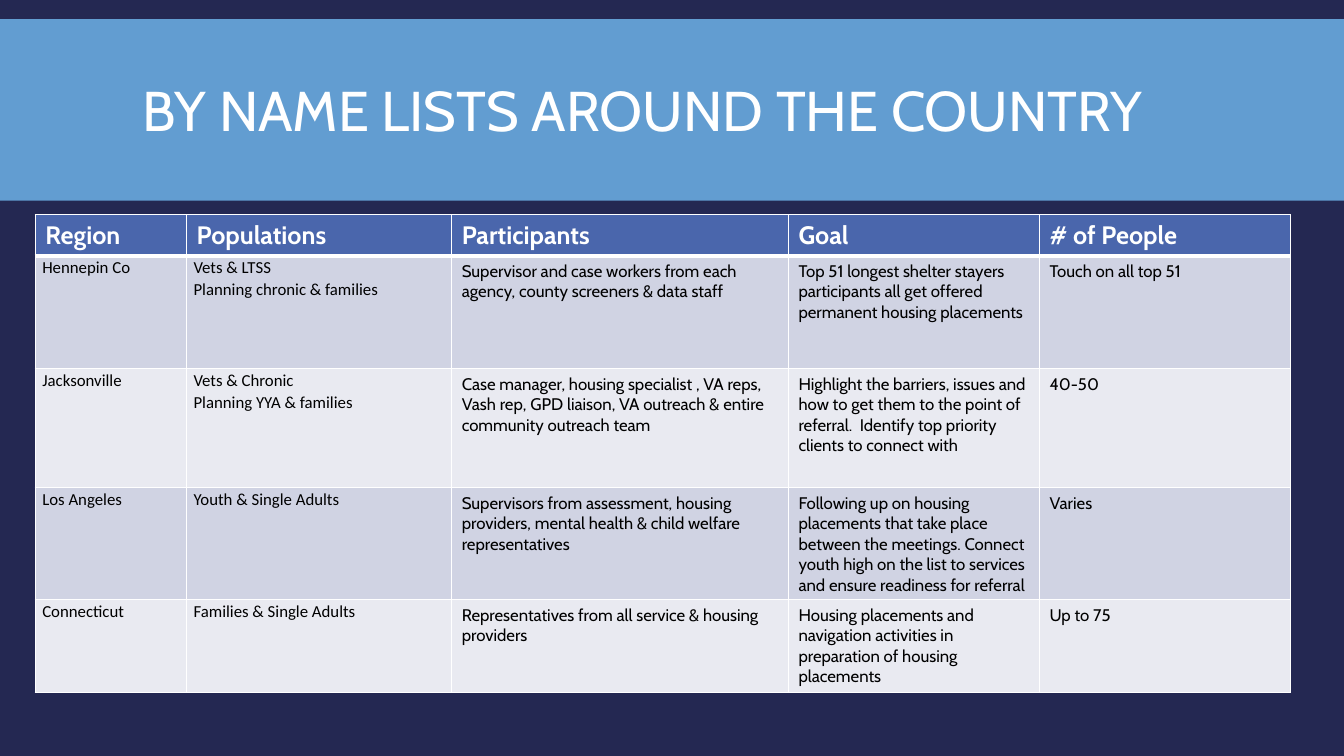
from dataclasses import dataclass

from lxml.etree import SubElement
from pptx import Presentation
from pptx.dml.color import RGBColor as Color
from pptx.enum.shapes import MSO_SHAPE as Preset
from pptx.enum.text import MSO_ANCHOR as Anchor
from pptx.oxml.ns import qn
from pptx.util import Inches, Pt


@dataclass(frozen=True)
class Theme:
    background: str = "242852"
    banner: str = "629DD1"
    header: str = "4A66AC"
    bands: tuple = ("D0D3E3", "E9EAF1")
    light: str = "FFFFFF"
    dark: str = "000000"
    main_font: str = "Cabin"
    label_font: str = "Calibri"
    title_size: int = 40
    header_size: int = 18
    body_size: int = 12
    thin: int = 1
    thick: int = 3


COLUMN_WIDTHS = (1.5, 2.63, 3.34, 2.49, 2.49)
ROW_HEIGHTS = (0.41, 1.12, 1.18, 1.11, 0.92)
LABEL_COLUMNS = 2
HEADINGS = ("Region", "Populations", "Participants", "Goal", "# of People")
REGIONS = (
    (
        "Hennepin Co",
        "Vets & LTSS\nPlanning chronic & families",
        "Supervisor and case workers from each agency, county screeners & data staff",
        "Top 51 longest shelter stayers participants all get offered permanent housing placements",
        "Touch on all top 51",
    ),
    (
        "Jacksonville",
        "Vets & Chronic\nPlanning YYA & families",
        "Case manager, housing specialist , VA reps,  Vash rep, GPD liaison, "
        "VA outreach & entire community outreach team",
        "Highlight the barriers, issues and how to get them to the point of referral.  "
        "Identify top priority clients to connect with",
        "40-50",
    ),
    (
        "Los Angeles",
        "Youth & Single Adults",
        "Supervisors from assessment, housing providers, mental health & child welfare representatives",
        "Following up on housing placements that take place between the meetings. "
        "Connect youth high on the list to services and ensure readiness for referral",
        "Varies",
    ),
    (
        "Connecticut",
        "Families & Single Adults",
        "Representatives from all service & housing providers",
        "Housing placements and navigation activities in preparation of housing placements",
        "Up to 75",
    ),
)


def write_text(frame, text, *, font, size, color, bold=False, spacing=None):
    for index, line in enumerate(text.split("\n")):
        para = frame.add_paragraph() if index else frame.paragraphs[0]
        if spacing:
            para.line_spacing = spacing
        span = para.add_run()
        span.text = line
        span.font.name = font
        span.font.size = Pt(size)
        span.font.bold = bold
        span.font.color.rgb = Color.from_string(color)


class PageBuilder:
    def __init__(self, page, theme):
        self.page = page
        self.theme = theme

    def background(self):
        fill = self.page.background.fill
        fill.solid()
        fill.fore_color.rgb = Color.from_string(self.theme.background)

    def banner(self, *place):
        box = self.page.shapes.add_shape(Preset.RECTANGLE, *map(Inches, place))
        box.shadow.inherit = False
        box.fill.solid()
        box.fill.fore_color.rgb = Color.from_string(self.theme.banner)
        box.line.fill.background()

    def title(self, text, *place):
        frame = self.page.shapes.add_textbox(*map(Inches, place)).text_frame
        frame.word_wrap = True
        frame.vertical_anchor = Anchor.MIDDLE
        write_text(frame, text, font=self.theme.main_font, size=self.theme.title_size,
                   color=self.theme.light, spacing=0.85)

    def borders(self, cell, top, bottom):
        properties = cell._tc.get_or_add_tcPr()
        widths = {"lnL": self.theme.thin, "lnR": self.theme.thin, "lnT": top, "lnB": bottom}
        for side, width in widths.items():
            line = SubElement(properties, qn(f"a:{side}"), w=str(Pt(width)))
            fill = SubElement(line, qn("a:solidFill"))
            SubElement(fill, qn("a:srgbClr"), val=self.theme.light)

    def cell(self, cell, text, row, column):
        theme = self.theme
        is_header = row == 0
        is_label = not is_header and column < LABEL_COLUMNS
        self.borders(cell, theme.thick if row == 1 else theme.thin,
                     theme.thick if is_header else theme.thin)
        cell.fill.solid()
        shade = theme.header if is_header else theme.bands[(row - 1) % 2]
        cell.fill.fore_color.rgb = Color.from_string(shade)
        if is_label:
            cell.margin_left = cell.margin_right = Inches(0.07)
            cell.margin_top = cell.margin_bottom = 0
        write_text(
            cell.text_frame, text,
            font=theme.label_font if is_label else theme.main_font,
            size=theme.header_size if is_header else theme.body_size,
            color=theme.light if is_header else theme.dark,
            bold=is_header,
            spacing=1.07 if is_label else None,
        )

    def table(self, rows, left, top):
        place = map(Inches, (left, top, sum(COLUMN_WIDTHS), sum(ROW_HEIGHTS)))
        table = self.page.shapes.add_table(len(rows), len(COLUMN_WIDTHS), *place).table
        for column, width in zip(table.columns, COLUMN_WIDTHS):
            column.width = Inches(width)
        for row, height in zip(table.rows, ROW_HEIGHTS):
            row.height = Inches(height)
        for row, texts in enumerate(rows):
            for column, text in enumerate(texts):
                self.cell(table.cell(row, column), text, row, column)


def main():
    deck = Presentation()
    deck.slide_width, deck.slide_height = Inches(13.33), Inches(7.5)
    builder = PageBuilder(deck.slides.add_slide(deck.slide_layouts[6]), Theme())
    builder.background()
    builder.banner(0, 0.19, 13.33, 1.8)
    builder.title("BY NAME LISTS AROUND THE COUNTRY", 1.32, 0.31, 10.7, 1.65)
    builder.table((HEADINGS, *REGIONS), 0.35, 2.13)
    deck.save("out.pptx")


if __name__ == "__main__":
    main()
